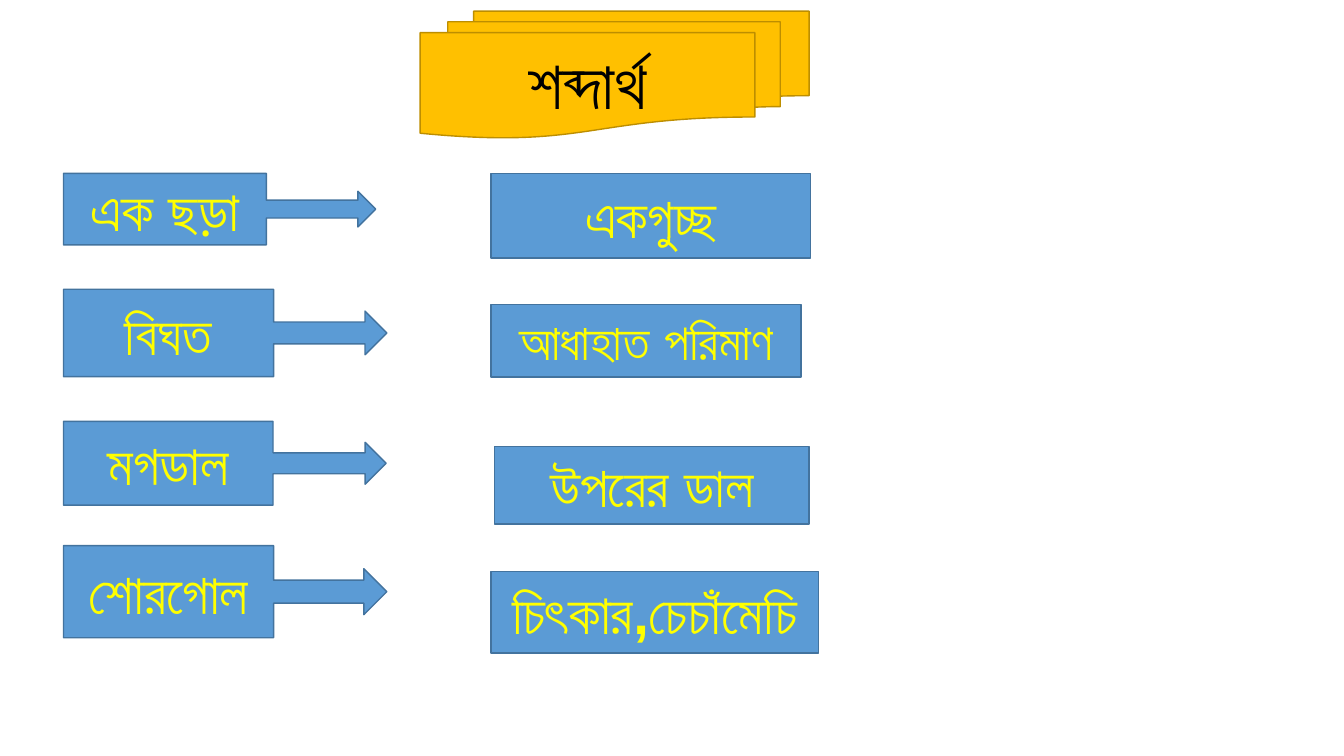
from pptx import Presentation
from pptx.dml.color import RGBColor
from pptx.enum.shapes import MSO_SHAPE
from pptx.enum.text import MSO_ANCHOR, PP_ALIGN
from pptx.util import Cm, Pt

STACK = MSO_SHAPE.FLOWCHART_MULTIDOCUMENT
ARROW = MSO_SHAPE.RIGHT_ARROW_CALLOUT
RECT = MSO_SHAPE.RECTANGLE
MIDDLE = MSO_ANCHOR.MIDDLE
CENTER = PP_ALIGN.CENTER

GOLD = RGBColor(0xFF, 0xC0, 0x00)
BROWN = RGBColor(0xBD, 0x8E, 0x00)
BLUE = RGBColor(0x5B, 0x9B, 0xD5)
NAVY = RGBColor(0x43, 0x73, 0x9E)
BLACK = RGBColor(0x00, 0x00, 0x00)
YELLOW = RGBColor(0xFF, 0xFF, 0x00)

deck = Presentation()
deck.slide_width = Cm(33.87)
deck.slide_height = Cm(19.05)
slide = deck.slides.add_slide(deck.slide_layouts[6])


def add_box(text, kind, place, size=40, color=YELLOW, fill=BLUE, edge=NAVY):
    """Draw a filled shape with bold centred text; place is left, top, width, height in cm."""
    box = slide.shapes.add_shape(kind, *[Cm(n) for n in place])
    box.shadow.inherit = False
    box.fill.solid()
    box.fill.fore_color.rgb = fill
    box.line.color.rgb = edge
    box.line.width = Pt(1)
    frame = box.text_frame
    frame.word_wrap = True
    frame.vertical_anchor = MIDDLE
    line = frame.paragraphs[0]
    line.alignment = CENTER
    run = line.add_run()
    run.text = text
    run.font.name = "Arial"
    run.font.size = Pt(size)
    run.font.bold = True
    run.font.color.rgb = color


add_box("শব্দার্থ", STACK, (10.59, 0.28, 9.8, 3.2),
        size=48, color=BLACK, fill=GOLD, edge=BROWN)

# Each word: text, top, width, height
words = [
    ("এক ছড়া", 4.37, 7.87, 1.8),
    ("বিঘত", 7.29, 8.15, 2.2),
    ("মগডাল", 10.62, 8.13, 2.11),
    ("শোরগোল", 13.75, 8.15, 2.32),
]
for text, top, width, height in words:
    add_box(text, ARROW, (1.6, top, width, height))

# Each meaning: text, left, top, width, height, text size
senses = [
    ("একগুচ্ছ", 12.37, 4.37, 8.05, 2.13, 40),
    ("আধাহাত পরিমাণ", 12.37, 7.67, 7.82, 1.83, 36),
    ("উপরের ডাল", 12.47, 11.25, 7.92, 1.96, 40),
    ("চিৎকার,চেচাঁমেচি", 12.37, 14.4, 8.26, 2.06, 40),
]
for text, *place, size in senses:
    add_box(text, RECT, place, size=size)

deck.save("out.pptx")
